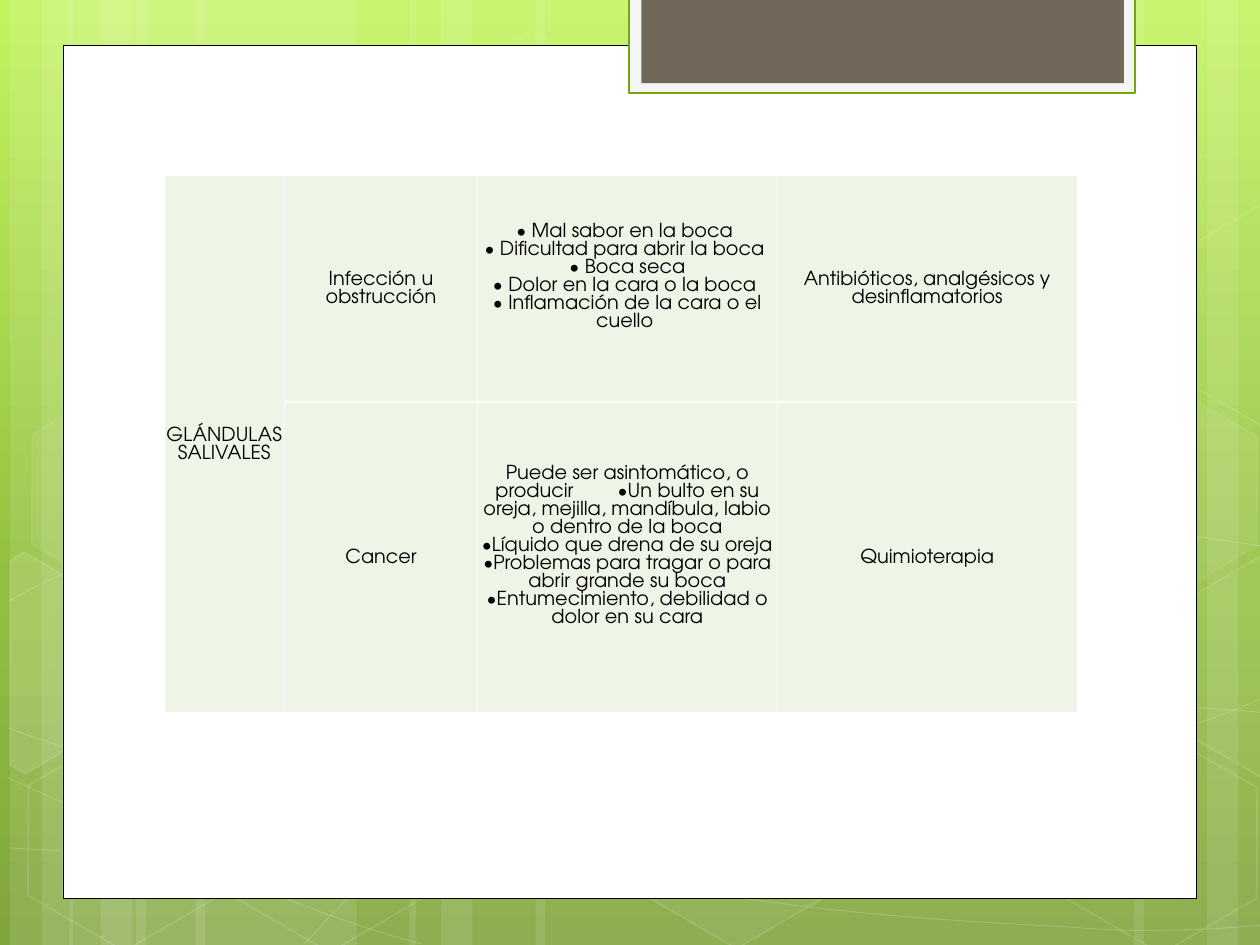
from copy import deepcopy
from math import cos, radians, sin

from lxml.etree import SubElement
from pptx import Presentation
from pptx.dml.color import RGBColor
from pptx.enum.shapes import MSO_SHAPE as Shape
from pptx.enum.text import MSO_ANCHOR as Anchor, PP_ALIGN as Align
from pptx.oxml.ns import qn
from pptx.util import Inches, Pt

COLUMNS, ROWS = 10, 7.5
UNIT = Inches(1)
WHITE = RGBColor(0xFF, 0xFF, 0xFF)
BLACK = RGBColor(0x00, 0x00, 0x00)
LIME = RGBColor(0xC3, 0xF3, 0x5F)
LEAF = RGBColor(0x93, 0xBF, 0x3F)
MOSS = RGBColor(0x81, 0xA5, 0x3E)
TAB_EDGE = RGBColor(0x74, 0xA5, 0x10)
TAB_PAPER = RGBColor(0xF5, 0xF5, 0xF5)
TAUPE = RGBColor(0x71, 0x68, 0x5A)
CELL_GREEN = RGBColor(0xEE, 0xF5, 0xE7)
FONT = "TeX Gyre Adventor"
LINE_PITCH = Pt(10.3)
LIST_MARGIN = Pt(14)
TILT = 30

STRIPES = [(1, 1.75), (0, 0.5), (0.25, 0.83)]
WIDE_STRIPES = [(1, 3.08), (0, 0.5), (0.25, 0.83)]
CURVES = [
    [(0.07, 6.73), (0.61, 6.76), (1.15, 6.79), (1.9, 6.78), (2.65, 6.77), (3.58, 6.75), (4.58, 6.65),
     (5.58, 6.55), (7, 6.36), (7.92, 6.17), (8.83, 5.98), (9.77, 5.68), (10.07, 5.51)],
    [(0.07, 4.77), (0.36, 4.61), (0.65, 4.46), (1.21, 4.31), (1.78, 4.16), (2.59, 3.94), (3.47, 3.87),
     (4.36, 3.8), (5.44, 3.79), (6.54, 3.87), (7.64, 3.95), (9.47, 4.26), (10.07, 4.34)],
    [(0.06, 6.17), (1.27, 6.72), (2.47, 7.27), (3.34, 7.49)],
    [(0.07, 5.78), (0.38, 5.89), (0.7, 6), (1.28, 6.16), (1.86, 6.31), (2.73, 6.56), (3.57, 6.73),
     (4.4, 6.9), (5.45, 7.08), (6.28, 7.18), (7.11, 7.29), (8, 7.33), (8.53, 7.36),
     (9.05, 7.4), (9.19, 7.38), (9.45, 7.38), (9.71, 7.37), (9.89, 7.35), (10.07, 7.34)],
    [(2.42, 7.49), (2.6, 7.29), (2.78, 7.09), (3.02, 6.91), (3.26, 6.73), (3.6, 6.53), (3.88, 6.39),
     (4.16, 6.25), (4.33, 6.19), (4.7, 6.09), (5.06, 5.99), (5.73, 5.85), (6.08, 5.78),
     (6.44, 5.71), (6.49, 5.71), (6.8, 5.69), (7.11, 5.66), (7.6, 5.63), (7.94, 5.62),
     (8.29, 5.61), (8.86, 5.62), (8.86, 5.62), (8.86, 5.62), (9.53, 5.62), (9.53, 5.62),
     (9.71, 5.63), (9.88, 5.64), (9.97, 5.65), (10.06, 5.66), (10.03, 5.65), (10.06, 5.66)],
]
HEXAGONS = [
    (3.34, 0.36, 4, 8), (4.97, 5.89, 6, 12), (0.11, 5.91, 0, 12),
    (0.14, 3.12, 7, 8), (1.74, 5.92, 0, 12), (7.53, 4.53, 10, 12),
    (8.34, 5.93, 0, 12), (8.34, 3.14, 7, 8),
]
LEFT_CUT = [(0.08, 4.45), (0.19, 4.38), (0.96, 4.82), (0.95, 5.7), (0.2, 6.14), (0.08, 6.07)]
LEFT_CENTER = (0.36, 5.35)
RIGHT_CUT = [(9.26, 4.85), (10.01, 4.41), (10.09, 4.46), (10.09, 6.13), (10.02, 6.17), (9.26, 5.73)]
RIGHT_CENTER = (9.85, 5.2)
RIGHT_CUT_RISE = 2.79

TABLE_COLUMNS = [0.96, 1.53, 2.38, 2.38]
TABLE_ROWS = [1.8, 2.47]
GLAND = "GLÁNDULAS SALIVALES"
INFECTION_SIGNS = "\n".join([
    "• Mal sabor en la boca ",
    "• Dificultad para abrir la boca ",
    "• Boca seca",
    "• Dolor en la cara o la boca ",
    "• Inflamación de la cara o el cuello ",
])
CANCER_SIGNS = "\n".join([
    "Puede ser asintomático, o producir\t•Un bulto en su oreja, mejilla, mandíbula, labio o dentro de la boca",
    "•Líquido que drena de su oreja",
    "•Problemas para tragar o para abrir grande su boca",
    "•Entumecimiento, debilidad o dolor en su cara",
])
CONDITIONS = [
    ["Infección u obstrucción", INFECTION_SIGNS, "Antibióticos, analgésicos y desinflamatorios"],
    ["Cancer", CANCER_SIGNS, "Quimioterapia"],
]


def grid(*lengths):
    """Turn grid lengths into whole slide units."""
    return [round(length * UNIT) for length in lengths]


def set_alpha(parent, percent):
    """Make the solid colour below parent partly transparent."""
    if percent < 100:
        color = parent.find(qn("a:solidFill")).find(qn("a:srgbClr"))
        SubElement(color, qn("a:alpha"), val=str(percent * 1000))


def paint(shape, fill=None, fill_alpha=100, line=None, weight=1, line_alpha=100):
    """Give a shape its fill and outline, without shadow."""
    shape.shadow.inherit = False
    properties = shape.element.spPr
    if fill is not None and fill_alpha:
        shape.fill.solid()
        shape.fill.fore_color.rgb = fill
        set_alpha(properties, fill_alpha)
    else:
        shape.fill.background()
    if line is None:
        shape.line.fill.background()
        return
    shape.line.color.rgb = line
    shape.line.width = Pt(weight)
    set_alpha(properties.find(qn("a:ln")), line_alpha)


def add_panel(slide, left, top, width, height, fill, **look):
    """Add a painted rectangle."""
    panel = slide.shapes.add_shape(Shape.RECTANGLE, *grid(left, top, width, height))
    paint(panel, fill, **look)


def add_outline(slide, points, close):
    """Add a freeform through the given grid points."""
    start, *rest = [grid(*point) for point in points]
    builder = slide.shapes.build_freeform(*start)
    builder.add_line_segments(rest, close=close)
    return builder.convert_to_shape()


def add_curve(slide, knots):
    """Add a faint chain of cubic Bézier curves."""
    curve = add_outline(slide, knots, False)
    outline = curve.element.find(".//" + qn("a:path"))
    steps = outline.findall(qn("a:lnTo"))
    for first in range(0, len(steps), 3):
        bend = SubElement(outline, qn("a:cubicBezTo"))
        for step in steps[first:first + 3]:
            bend.append(step[0])
            outline.remove(step)
    paint(curve, line=WHITE, weight=0.5, line_alpha=20)


def add_cut_hexagon(slide, corners, center, fill_alpha):
    """Add a tilted hexagon cut off at the slide edge."""
    turn = radians(-TILT)
    offsets = [(x - center[0], y - center[1]) for x, y in corners]
    upright = [(center[0] + x * cos(turn) - y * sin(turn),
                center[1] + x * sin(turn) + y * cos(turn)) for x, y in offsets]
    hexagon = add_outline(slide, upright, True)
    hexagon.rotation = TILT
    paint(hexagon, WHITE, fill_alpha, WHITE, 1, 12)


def add_hexagon(slide, left, top, fill_alpha, line_alpha):
    """Add a faint tilted hexagon."""
    hexagon = slide.shapes.add_shape(Shape.HEXAGON, *grid(left, top, 1.75, 1.52))
    hexagon.adjustments[0] = 0.285
    hexagon.rotation = TILT
    paint(hexagon, WHITE, fill_alpha, WHITE, 1, line_alpha)


def set_background(slide):
    """Fill the background with the vertical green gradient."""
    fill = slide.background.fill
    fill.gradient()
    fill.gradient_angle = 270
    stops = slide.element.find(".//" + qn("a:gsLst"))
    stops.append(deepcopy(stops[-1]))
    for stop, color, position in zip(fill.gradient_stops, (LIME, LEAF, MOSS), (0, 0.62, 1)):
        stop.color.rgb = color
        stop.position = position


def add_decoration(slide):
    """Draw the stripes, curves and hexagons behind the page."""
    bands = [(base + offset, width) for base in (0.08, 0.55) for offset, width in STRIPES]
    bands += [(10.08 - offset - width, width) for offset, width in STRIPES]
    bands += [(3.25 + offset, width) for offset, width in WIDE_STRIPES]
    for left, width in bands:
        add_panel(slide, left, 0, width, ROWS, WHITE, fill_alpha=10)
    for knots in CURVES:
        add_curve(slide, knots)
    for hexagon in HEXAGONS:
        add_hexagon(slide, *hexagon)
    add_cut_hexagon(slide, LEFT_CUT, LEFT_CENTER, 10)
    for rise, fill_alpha in ((0, 4), (RIGHT_CUT_RISE, 0)):
        corners = [(x, y - rise) for x, y in RIGHT_CUT]
        add_cut_hexagon(slide, corners, (RIGHT_CENTER[0], RIGHT_CENTER[1] - rise), fill_alpha)


def write_lines(paragraph, text):
    """Write lines with breaks, a tab mark becoming one widened space."""
    for number, line in enumerate(text.split("\n")):
        if number:
            paragraph.add_line_break()
        for part, piece in enumerate(line.split("\t")):
            if part:
                gap = paragraph.add_run()
                gap.text = " "
                gap._r.get_or_add_rPr().set("spc", "2200")
            paragraph.add_run().text = piece


def fill_cell(cell, text):
    """Style a table cell and write its centred text."""
    properties = cell._tc.get_or_add_tcPr()
    for side in ("a:lnL", "a:lnR", "a:lnT", "a:lnB"):
        border = SubElement(properties, qn(side), w=str(Pt(1)))
        SubElement(SubElement(border, qn("a:solidFill")), qn("a:srgbClr"), val=str(WHITE))
    cell.fill.solid()
    cell.fill.fore_color.rgb = CELL_GREEN
    cell.vertical_anchor = Anchor.MIDDLE
    cell.margin_left = cell.margin_right = cell.margin_top = Inches(0.01)
    cell.margin_bottom = LIST_MARGIN if "\n" in text else 0
    if not text:
        return
    paragraph = cell.text_frame.paragraphs[0]
    paragraph.alignment = Align.CENTER
    paragraph.line_spacing = LINE_PITCH
    paragraph.font.size = Pt(11)
    paragraph.font.name = FONT
    paragraph.font.color.rgb = BLACK
    write_lines(paragraph, text)


def add_conditions_table(slide):
    """Add the table of salivary gland conditions."""
    frame = grid(1.3, 1.39, sum(TABLE_COLUMNS), sum(TABLE_ROWS))
    table = slide.shapes.add_table(len(TABLE_ROWS), len(TABLE_COLUMNS), *frame).table
    table.first_row = table.horz_banding = False
    for column, width in zip(table.columns, grid(*TABLE_COLUMNS)):
        column.width = width
    for row, height in zip(table.rows, grid(*TABLE_ROWS)):
        row.height = height
    table.cell(0, 0).merge(table.cell(1, 0))
    for row, texts in enumerate(CONDITIONS):
        for column, text in enumerate(["" if row else GLAND, *texts]):
            fill_cell(table.cell(row, column), text)


def main():
    """Build the slide and save it."""
    deck = Presentation()
    deck.slide_width, deck.slide_height = grid(COLUMNS, ROWS)
    slide = deck.slides.add_slide(deck.slide_layouts[6])
    set_background(slide)
    add_decoration(slide)
    add_panel(slide, 0.5, 0.36, 9, 6.77, WHITE, line=BLACK, weight=0.5)
    add_panel(slide, 4.99, -0.02, 4.02, 0.76, TAB_PAPER, line=TAB_EDGE, weight=1.25)
    add_panel(slide, 5.09, -0.02, 3.83, 0.68, TAUPE)
    add_conditions_table(slide)
    deck.save("out.pptx")


if __name__ == "__main__":
    main()
